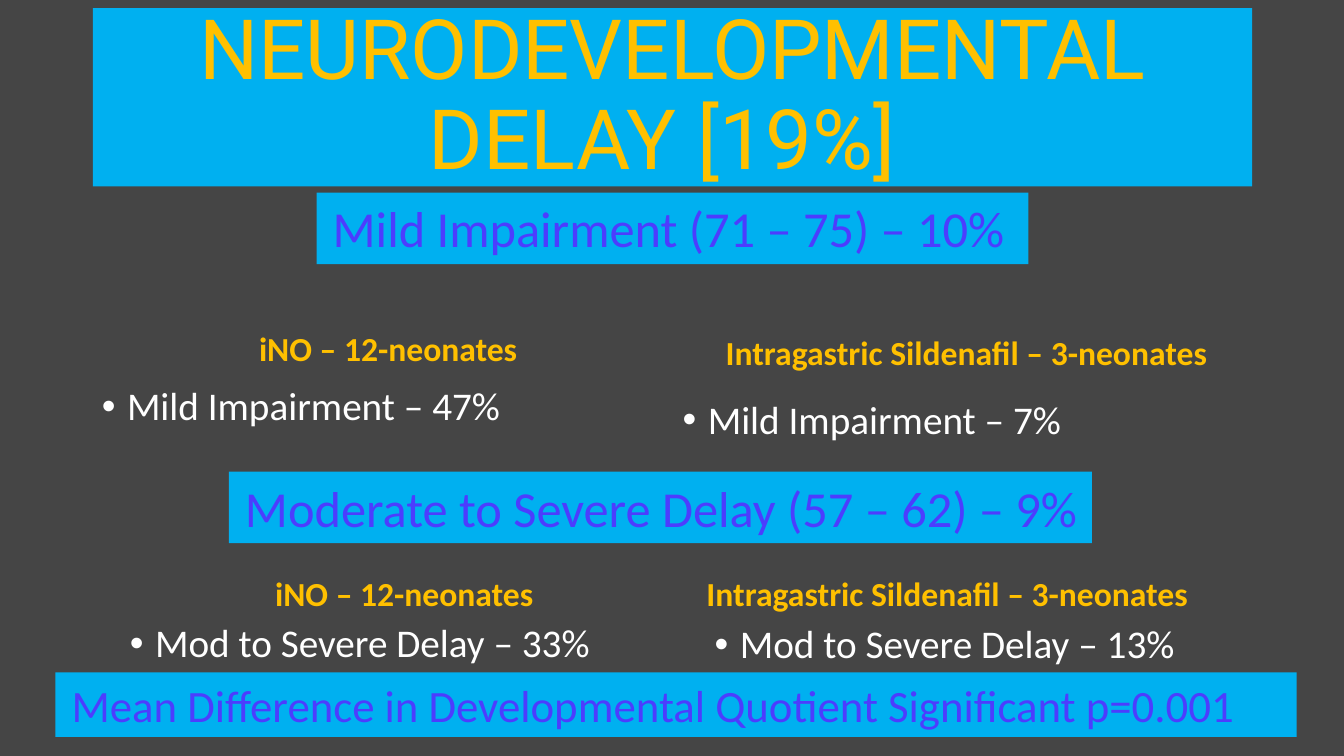
from lxml.etree import SubElement
from pptx import Presentation
from pptx.dml.color import RGBColor
from pptx.enum.shapes import MSO_SHAPE
from pptx.enum.text import MSO_ANCHOR, MSO_AUTO_SIZE, PP_ALIGN
from pptx.oxml.ns import qn
from pptx.util import Inches, Pt

BACKGROUND = RGBColor(0x45, 0x45, 0x45)
BLUE = RGBColor(0x00, 0xB0, 0xF0)
GOLD = RGBColor(0xFF, 0xC0, 0x00)
VIOLET = RGBColor(0x4C, 0x3D, 0xFE)
WHITE = RGBColor(0xFF, 0xFF, 0xFF)

# Content: boxes are (left, top, width, height) in inches
TITLE = ("NEURODEVELOPMENTAL DELAY [19%] ", (0.92, 0.08, 11.5, 1.77))
INO = "iNO – 12-neonates"
SILDENAFIL = "Intragastric Sildenafil – 3-neonates"

# Text, box, is a heading, layout placeholder index (None: text box)
GROUPS = [
    (INO, (1.03, 2.81, 5.64, 0.9), True, 1),
    ("Mild Impairment – 47%", (0.91, 3.79, 5.64, 0.56), False, 2),
    (SILDENAFIL, (6.75, 2.85, 5.67, 0.9), True, 3),
    ("Mild Impairment – 7%", (6.67, 3.92, 5.67, 0.56), False, 4),
    (INO, (1.19, 5.24, 5.64, 0.9), True, None),
    ("Mod to Severe Delay – 33%", (1.19, 6.14, 5.64, 0.56), False, None),
    (SILDENAFIL, (6.56, 5.24, 5.67, 0.9), True, None),
    ("Mod to Severe Delay – 13%", (6.99, 6.15, 5.67, 0.56), False, None),
]
# Text, box, font size
BANNERS = [
    ("Mild Impairment (71 – 75) – 10%", (3.14, 1.91, 7.06, 0.71), 36),
    ("Moderate to Severe Delay (57 – 62) – 9%", (2.27, 4.68, 8.56, 0.71), 36),
    ("Mean Difference in Developmental Quotient Significant p=0.001",
     (0.55, 6.67, 12.31, 0.64), 32),
]


def place(shape, box):
    shape.left, shape.top, shape.width, shape.height = map(Inches, box)


def fill_blue(shape):
    shape.fill.solid()
    shape.fill.fore_color.rgb = BLUE


def write(shape, text, size, color, font="Calibri", bold=False, align=PP_ALIGN.LEFT,
          anchor=MSO_ANCHOR.TOP, spacing=0.9, bullet=False):
    frame = shape.text_frame
    frame.word_wrap = True
    frame.auto_size = MSO_AUTO_SIZE.NONE
    frame.vertical_anchor = anchor
    paragraph = frame.paragraphs[0]
    paragraph.text = text
    paragraph.alignment = align
    paragraph.line_spacing = spacing
    paragraph.space_before = Pt(0)
    properties = paragraph._p.get_or_add_pPr()
    indent = Inches(0.25) if bullet else 0
    properties.set("marL", str(indent))
    properties.set("indent", str(-indent))
    if bullet:
        SubElement(properties, qn("a:buFont"), typeface="Arial")
        SubElement(properties, qn("a:buChar"), char="•")
    else:
        SubElement(properties, qn("a:buNone"))
    paragraph.font.name = font
    paragraph.font.size = Pt(size)
    paragraph.font.bold = bold
    paragraph.font.color.rgb = color


presentation = Presentation()
presentation.slide_width, presentation.slide_height = Inches(13.33), Inches(7.5)
slide = presentation.slides.add_slide(presentation.slide_layouts.get_by_name("Comparison"))
slide.background.fill.solid()
slide.background.fill.fore_color.rgb = BACKGROUND
placeholders = {item.placeholder_format.idx: item for item in slide.placeholders}

# Title
title_text, title_box = TITLE
title = slide.shapes.title
place(title, title_box)
fill_blue(title)
write(title, title_text, 59.4, GOLD, font="Roboto", align=PP_ALIGN.CENTER,
      anchor=MSO_ANCHOR.MIDDLE)

# Treatment headings and their results
for text, box, is_heading, index in GROUPS:
    if index is None:
        shape = slide.shapes.add_textbox(*map(Inches, box))
    else:
        shape = placeholders[index]
        place(shape, box)
    if is_heading:
        write(shape, text, 24, GOLD, bold=True, align=PP_ALIGN.CENTER,
              anchor=MSO_ANCHOR.BOTTOM)
    else:
        write(shape, text, 28, WHITE, bullet=True)

# Blue banners
for text, box, size in BANNERS:
    banner = slide.shapes.add_shape(MSO_SHAPE.RECTANGLE, *map(Inches, box))
    banner.shadow.inherit = False
    banner.line.fill.background()
    fill_blue(banner)
    banner.text_frame.margin_left = Inches(0.16)
    write(banner, text, size, VIOLET, spacing=1.0)

presentation.save("out.pptx")
